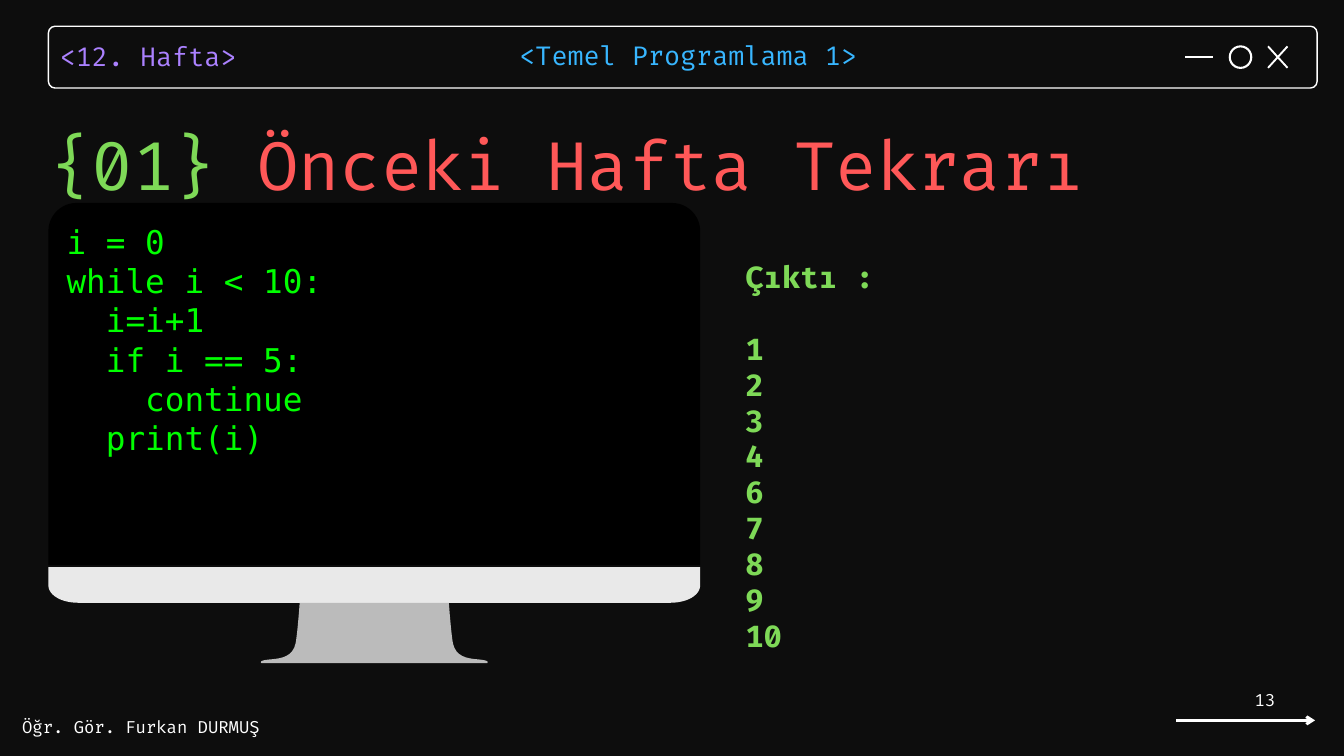
"""Build the lesson slide with a code screen and its printed output."""
from lxml import etree
from pptx import Presentation, util as u
from pptx.dml.color import RGBColor
from pptx.enum import shapes as s, text as t
from pptx.oxml import ns

COLS, ROWS = 20, 11.25
CELL = u.Inches(1)
MONO, CODE = "Fira Code", "DejaVu Sans Mono"
DARK = RGBColor(0x0D, 0x0D, 0x0D)
BLACK = RGBColor(0, 0, 0)
WHITE = RGBColor(0xFF, 0xFF, 0xFF)
PURPLE = RGBColor(0xAB, 0x81, 0xFF)
BLUE = RGBColor(0x38, 0xB6, 0xFF)
GREEN = RGBColor(0x7E, 0xD9, 0x57)
RED = RGBColor(0xFF, 0x58, 0x58)
LIME = RGBColor(0, 0xFF, 0)
PALE = RGBColor(0xE9, 0xE9, 0xE9)
GREY = RGBColor(0xBB, 0xBB, 0xBB)

SOURCE = """i = 0
while i < 10:
  i=i+1
  if i == 5:
    continue
  print(i)"""


def grid(*cells):
    """Turn grid cells into slide lengths."""
    return [u.Emu(round(c * CELL)) for c in cells]


def paint(shape, fill=None, line=None, width=1):
    """Set fill and outline, without a shadow."""
    shape.shadow.inherit = False
    if fill is None:
        shape.fill.background()
    else:
        shape.fill.solid()
        shape.fill.fore_color.rgb = fill
    if line is None:
        shape.line.fill.background()
    else:
        shape.line.color.rgb = line
        shape.line.width = u.Pt(width)


def block(slide, kind, cells, radius=None, **look):
    """Add a preset shape, with a corner radius if given."""
    shape = slide.shapes.add_shape(kind, *grid(*cells))
    if radius:
        shape.adjustments[0] = radius / min(cells[2:])
    paint(shape, **look)


def rule(slide, start, end, width=2, arrow=False):
    """Add a white straight line, with an arrowhead if asked."""
    line = slide.shapes.add_connector(
        s.MSO_CONNECTOR.STRAIGHT, *grid(*start, *end))
    line.line.color.rgb = WHITE
    line.line.width = u.Pt(width)
    if arrow:
        etree.SubElement(line.line._get_or_add_ln(),
                         ns.qn("a:tailEnd"), type="arrow")
    etree.SubElement(line._element.spPr, ns.qn("a:effectLst"))


def curve(a, b, c, d, steps=12):
    """Sample the points of a Bezier curve."""
    spots = []
    for i in range(steps + 1):
        k = i / steps
        j = 1 - k
        spots.append(tuple(
            j**3 * p + 3 * j * j * k * q + 3 * j * k * k * r + k**3 * e
            for p, q, r, e in zip(a, b, c, d)))
    return spots


def mirror(slide, half, axis, fill):
    """Draw an outline from its left half, mirrored at an axis."""
    spots = half + [(2 * axis - x, y) for x, y in reversed(half)]
    first, *rest = [grid(*spot) for spot in spots]
    pen = slide.shapes.build_freeform(*first)
    pen.add_line_segments(rest, close=True)
    paint(pen.convert_to_shape(), fill=fill)


def style(part, size, color, font=MONO, bold=False):
    """Format every run of a paragraph."""
    for run in part.runs:
        run.font.size = u.Pt(size)
        run.font.color.rgb = color
        run.font.name = font
        run.font.bold = bold


def setup(shape, cells):
    """Place a text shape with no margins, text at the top."""
    shape.left, shape.top, shape.width, shape.height = grid(*cells)
    frame = shape.text_frame
    frame.word_wrap = True
    frame.auto_size = t.MSO_AUTO_SIZE.NONE
    frame.vertical_anchor = t.MSO_ANCHOR.TOP
    frame.margin_left = frame.margin_right = 0
    frame.margin_top = frame.margin_bottom = 0
    return frame


def label(slide, cells, words, size, color, font=MONO, pitch=None,
          align=t.PP_ALIGN.LEFT):
    """Add a text box in one style."""
    frame = setup(slide.shapes.add_textbox(*grid(*cells)), cells)
    frame.text = words
    for part in frame.paragraphs:
        part.alignment = align
        if pitch:
            part.line_spacing = u.Pt(pitch)
        style(part, size, color, font)


def header(slide):
    """Draw the window bar with its labels and buttons."""
    block(slide, s.MSO_SHAPE.ROUNDED_RECTANGLE, (0.72, 0.39, 18.88, 0.92),
          radius=0.1, line=WHITE, width=1.5)
    label(slide, (0.89, 0.52, 3.4, 0.53), "<12. Hafta>", 28, PURPLE,
          pitch=39.2)
    label(slide, (7.73, 0.51, 5.29, 0.53), "<Temel Programlama 1>", 28, BLUE,
          pitch=39.2)
    rule(slide, (17.64, 0.85), (18.05, 0.85))
    block(slide, s.MSO_SHAPE.OVAL, (18.3, 0.69, 0.32, 0.32),
          line=WHITE, width=2.25)
    rule(slide, (18.87, 0.69), (19.16, 1.01))
    rule(slide, (19.16, 0.69), (18.87, 1.01))


def title(slide):
    """Fill the title in two colours."""
    frame = setup(slide.shapes.title, (0.75, 1.61, 19.25, 1.38))
    part = frame.paragraphs[0]
    part.text = "{01} "
    part.add_run().text = "Önceki Hafta Tekrarı"
    part.alignment = t.PP_ALIGN.LEFT
    part.line_spacing = u.Pt(102.6)
    style(part, 72, GREEN)
    part.runs[1].font.color.rgb = RED


def screen(slide):
    """Draw the monitor and the code on it."""
    left, wide = 0.72, 9.7
    mid = left + wide / 2
    block(slide, s.MSO_SHAPE.ROUND_2_SAME_RECTANGLE, (left, 3.02, wide, 5.39),
          radius=0.42, fill=BLACK)
    chin = [(left, 8.44)] + curve(
        (left, 8.71), (left, 8.86), (0.92, 8.97), (1.16, 8.97))
    mirror(slide, chin, mid, PALE)
    foot = (curve((4.46, 8.97), (4.46, 8.97), (4.43, 9.4), (4.4, 9.57))
            + curve((4.4, 9.57), (4.34, 9.87), (3.99, 9.78), (3.89, 9.84))
            + curve((3.89, 9.84), (3.88, 9.85), (3.88, 9.87), (3.9, 9.87)))
    mirror(slide, foot, mid, GREY)
    block(slide, s.MSO_SHAPE.RECTANGLE, (1.14, 3.32, 8.91, 4.97),
          fill=BLACK, line=BLACK, width=2)
    label(slide, (0.99, 3.3, 9.16, 3.53), SOURCE, 35, LIME, CODE)


def output(slide):
    """List the printed numbers in the body placeholder."""
    frame = setup(slide.placeholders[1], (11.09, 3.85, 7, 5.92))
    nums = [str(n) for n in range(1, 11) if n != 5]
    frame.text = "\n".join(["Çıktı :"] + nums)
    for i, part in enumerate(frame.paragraphs):
        props = part._p.get_or_add_pPr()
        props.set("marL", "0")
        props.set("indent", "0")
        etree.SubElement(props, ns.qn("a:buNone"))
        part.alignment = t.PP_ALIGN.JUSTIFY
        part.space_before = u.Pt(38.5 if i == 1 else 0)
        style(part, 32, GREEN, bold=True)


def footer(slide):
    """Add the lecturer, the page number and the arrow."""
    label(slide, (0.33, 10.67, 3.67, 0.3), "Öğr. Gör. Furkan DURMUŞ", 18,
          WHITE)
    label(slide, (16.75, 10.26, 2.23, 0.3), "13", 18, WHITE,
          align=t.PP_ALIGN.RIGHT)
    rule(slide, (17.5, 10.72), (19.57, 10.72), width=3, arrow=True)


def main():
    """Build and save the slide."""
    deck = Presentation()
    deck.slide_width, deck.slide_height = grid(COLS, ROWS)
    slide = deck.slides.add_slide(deck.slide_layouts[1])
    slide.background.fill.solid()
    slide.background.fill.fore_color.rgb = DARK
    for draw in (header, title, screen, output, footer):
        draw(slide)
    deck.save("out.pptx")


if __name__ == "__main__":
    main()
